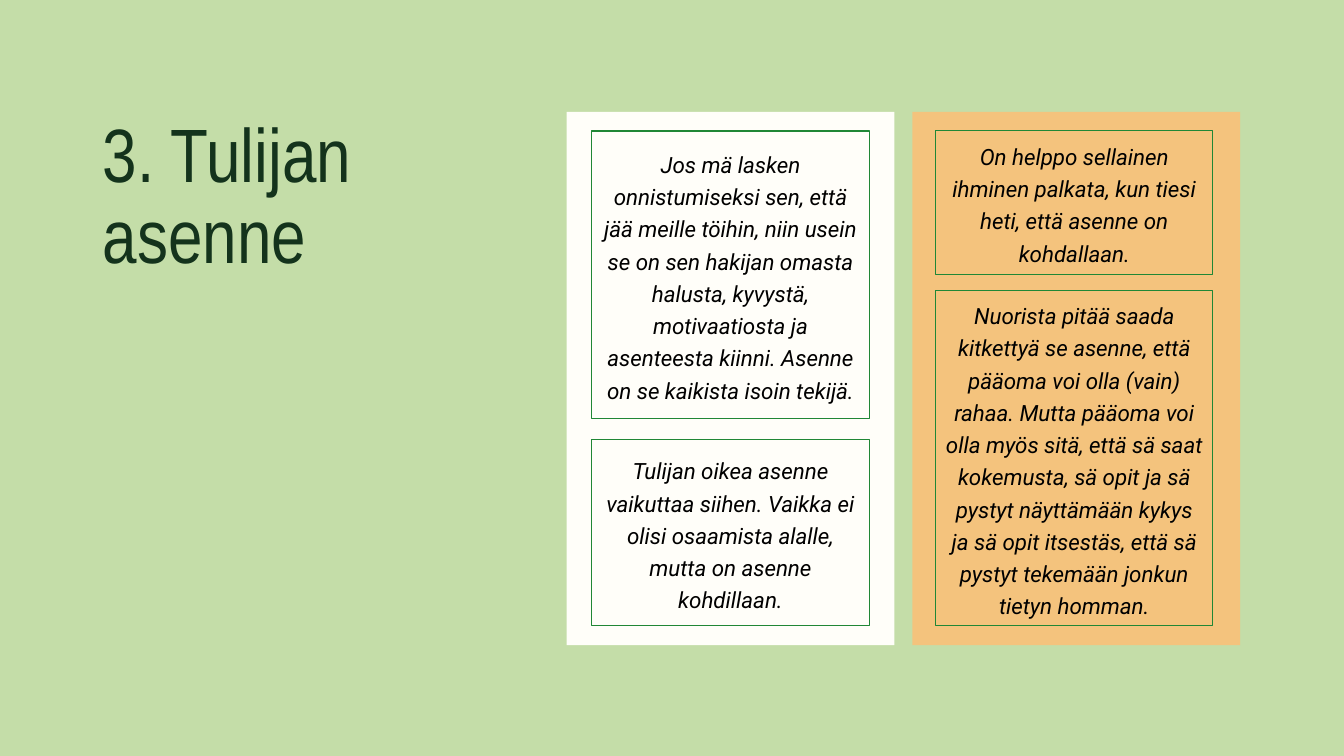
from lxml import etree
from pptx import Presentation, util as u
from pptx.dml.color import RGBColor
from pptx.enum import shapes, text
from pptx.oxml.ns import qn

MEADOW = RGBColor(0xC4, 0xDD, 0xA8)
CREAM = RGBColor(0xFF, 0xFE, 0xF9)
PEACH = RGBColor(0xF4, 0xC3, 0x7D)
FOREST = RGBColor(0x14, 0x33, 0x1C)
LEAF = RGBColor(0x20, 0x87, 0x36)
BLACK = RGBColor(0, 0, 0)


class Deck:
    """Slide style and element methods; lengths are percent of the slide."""

    head, font = "Arial Narrow", "Roboto"

    def __init__(self):
        self.prs = Presentation()
        self.prs.slide_width = u.Inches(13.33)
        self.prs.slide_height = u.Inches(7.5)
        self.page = self.prs.slides.add_slide(self.prs.slide_layouts[1])
        fill = self.page.background.fill
        fill.solid()
        fill.fore_color.rgb = MEADOW

    def area(self, x, y, w, h):
        wide, high = self.prs.slide_width, self.prs.slide_height
        return [int(part * full / 100) for part, full in
                zip((x, y, w, h), (wide, high, wide, high))]

    def place(self, shape, *area):
        shape.left, shape.top, shape.width, shape.height = self.area(*area)
        shape.element.getparent().append(shape.element)

    def rect(self, *area):
        shape = self.page.shapes.add_shape(
            shapes.MSO_SHAPE.RECTANGLE, *self.area(*area))
        shape.shadow.inherit = False
        return shape

    def label(self, shape, words, name, size, color, anchor, align, gap):
        frame = shape.text_frame
        frame.text = words
        frame.word_wrap = True
        frame.auto_size = text.MSO_AUTO_SIZE.NONE
        frame.vertical_anchor = anchor
        para = frame.paragraphs[0]
        para.alignment = align
        para.line_spacing = gap
        para.space_before = u.Pt(0)
        font = para.runs[0].font
        font.name, font.size = name, u.Pt(size)
        font.color.rgb = color
        return para

    def title(self, words, *area):
        shape = self.page.shapes.title
        self.place(shape, *area)
        self.label(shape, words, self.head, 54, FOREST,
                   text.MSO_ANCHOR.TOP, text.PP_ALIGN.LEFT, 0.9)

    def panel(self, color, *area):
        shape = self.rect(*area)
        shape.fill.solid()
        shape.fill.fore_color.rgb = color
        shape.line.fill.background()

    def quote(self, words, *area, body=False):
        if body:
            shape = self.page.placeholders[1]
            self.place(shape, *area)
        else:
            shape = self.rect(*area)
        shape.fill.background()
        shape.line.color.rgb = LEAF
        shape.line.width = u.Pt(0.75)
        para = self.label(shape, words, self.font, 16, BLACK,
                          text.MSO_ANCHOR.MIDDLE, text.PP_ALIGN.CENTER, 1.2)
        para.runs[0].font.italic = True
        if body:
            props = para._p.get_or_add_pPr()
            props.set("marL", "0")
            props.set("indent", "0")
            etree.SubElement(props, qn("a:buNone"))

    def save(self):
        self.prs.save("out.pptx")


def main():
    deck = Deck()
    top, left, right, wide = 14.8, 44.04, 69.62, 20.63
    for color, x in ((CREAM, 42.16), (PEACH, 67.89)):
        deck.panel(color, x, top, 24.38, 70.53)
    deck.title("3. Tulijan asenne", 6.9, top, 31.81, 21.47)
    deck.quote("Tulijan oikea asenne vaikuttaa siihen. Vaikka ei olisi "
               "osaamista alalle, mutta on asenne kohdillaan.",
               left, 58.13, wide, 24.67, body=True)
    deck.quote("Jos mä lasken onnistumiseksi sen, että jää meille töihin, "
               "niin usein se on sen hakijan omasta halusta, kyvystä, "
               "motivaatiosta ja asenteesta kiinni. Asenne on se kaikista "
               "isoin tekijä.", left, 17.33, wide, 38)
    deck.quote("Nuorista pitää saada kitkettyä se asenne, että pääoma voi "
               "olla (vain) rahaa. Mutta pääoma voi olla myös sitä, että sä "
               "saat kokemusta, sä opit ja sä pystyt näyttämään kykys ja sä "
               "opit itsestäs, että sä pystyt tekemään jonkun tietyn homman.",
               right, 38.4, wide, 44.4)
    deck.quote("On helppo sellainen ihminen palkata, kun tiesi heti, että "
               "asenne on kohdallaan.", right, 17.2, wide, 19.07)
    deck.save()


if __name__ == "__main__":
    main()
